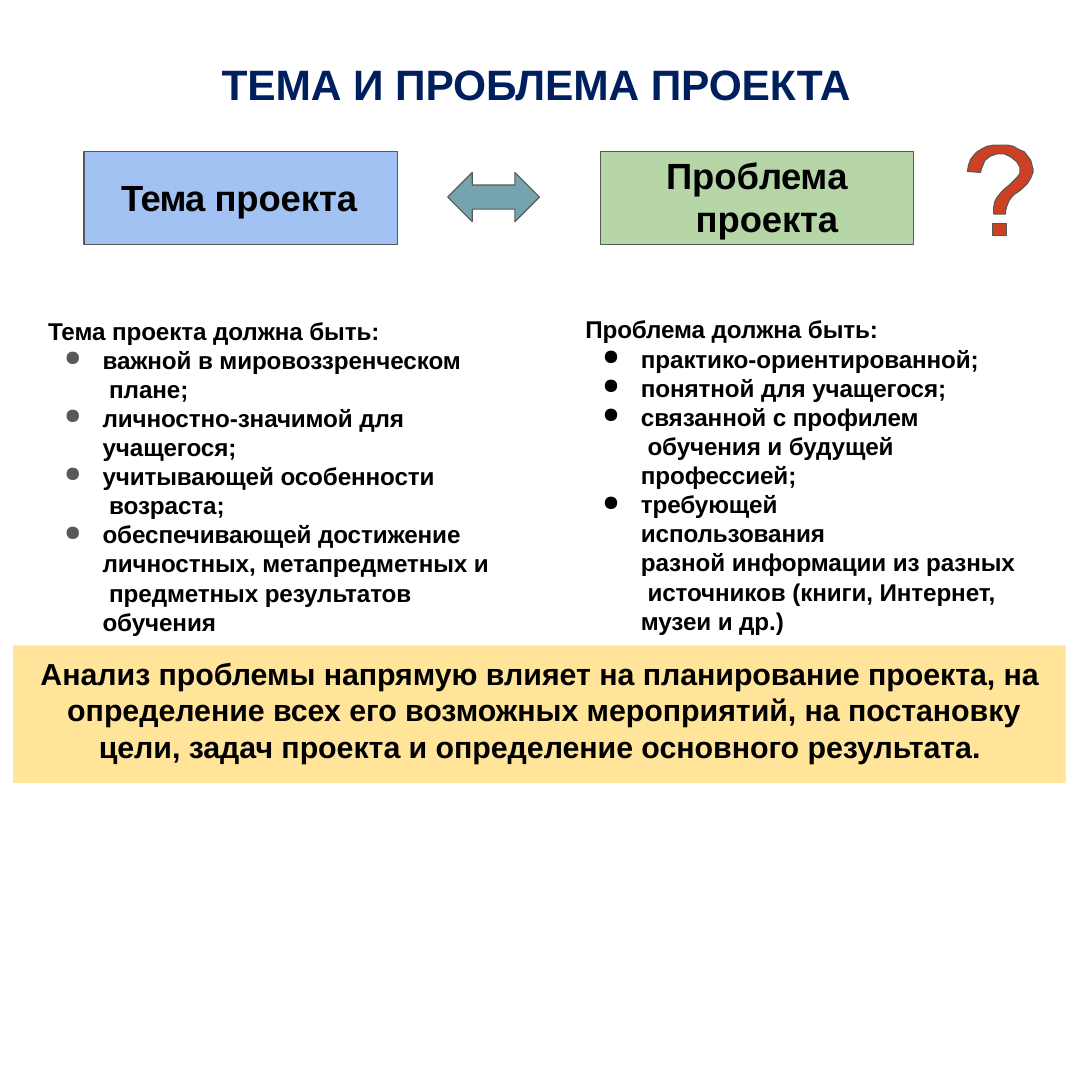
from dataclasses import dataclass

from lxml import etree
from pptx import Presentation
from pptx.dml.color import RGBColor
from pptx.enum.shapes import MSO_SHAPE
from pptx.enum.text import MSO_ANCHOR, PP_ALIGN
from pptx.oxml.ns import qn
from pptx.util import Pt

RECTANGLE = MSO_SHAPE.RECTANGLE
DOUBLE_ARROW = MSO_SHAPE.LEFT_RIGHT_ARROW
TOP = MSO_ANCHOR.TOP
LEFT = PP_ALIGN.LEFT
CENTER = PP_ALIGN.CENTER
PX = 9144


@dataclass(frozen=True)
class Theme:
    font: str = "Arial"
    title: str = "001F5F"
    ink: str = "000000"
    outline: str = "585858"
    topic: str = "A3C2F4"
    problem: str = "B6D6A8"
    arrow: str = "76A4AE"
    question: str = "CC4124"
    banner: str = "FFE499"
    title_size: int = 28
    label_size: int = 24
    banner_size: int = 20
    body_size: int = 16
    outline_width: float = 0.75
    tight: int = -5


THEME = Theme()

TOPIC_DEMANDS = [
    ["важной в мировоззренческом", " плане;"],
    ["личностно-значимой для", "учащегося;"],
    ["учитывающей особенности", " возраста;"],
    ["обеспечивающей достижение", "личностных, метапредметных и",
     " предметных результатов", "обучения"],
]
PROBLEM_DEMANDS = [
    ["практико-ориентированной;"],
    ["понятной для учащегося;"],
    ["связанной с профилем", " обучения и будущей", "профессией;"],
    ["требующей", "использования", "разной информации из разных",
     " источников (книги, Интернет,", "музеи и др.)"],
]
CONCLUSION = [
    ["Анализ проблемы напрямую влияет на планирование проекта, на",
     " определение всех его возможных мероприятий, на постановку"],
    ["цели, задач проекта и определение основного результата."],
]
TOPIC_LABEL = [[("Тема ", -60), ("проекта", -5)]]
PROBLEM_LABEL = [
    [("Про", 0), ("б", -60), ("лем", -40), ("а", 0)],
    [(" проекта", -5)],
]

QUESTION_DOT = [(909, 205), (922, 205), (922, 216), (909, 216)]
QUESTION_HOOK = [
    (916, 133), (923, 133), (928, 134), (933, 137), (938, 139), (941, 143),
    (944, 147), (945, 151), (946, 155), (946, 158), (944, 163), (941, 168),
    (936, 173), (932, 176), (929, 178), (927, 180), (924, 184), (922, 189),
    (921, 193), (921, 196), (910, 196), (910, 193), (910, 190), (911, 185),
    (913, 181), (917, 176), (920, 173), (925, 169), (927, 167), (931, 163),
    (934, 159), (934, 156), (934, 153), (931, 148), (926, 144), (920, 141),
    (916, 141), (913, 141), (907, 143), (902, 147), (899, 154), (898, 158),
    (886, 157), (887, 151), (889, 146), (892, 142), (895, 139), (900, 136),
    (904, 134), (910, 133),
]


def rgb(value):
    return RGBColor.from_string(value)


def emu(*lengths):
    return [length * PX for length in lengths]


def paint(shape, fill, outline=None):
    shape.shadow.inherit = False
    shape.fill.solid()
    shape.fill.fore_color.rgb = rgb(fill)
    if outline:
        shape.line.color.rgb = rgb(outline)
        shape.line.width = Pt(THEME.outline_width)
    else:
        shape.line.fill.background()


def prepare_frame(shape, left=0, top=1, right=0):
    frame = shape.text_frame
    frame.word_wrap = True
    frame.vertical_anchor = TOP
    frame.margin_left, frame.margin_top, frame.margin_right = emu(left, top, right)
    frame.margin_bottom = 0
    return frame


def add_run(paragraph, text, size, color, spacing):
    run = paragraph.add_run()
    run.text = text
    run.font.name = THEME.font
    run.font.size = Pt(size)
    run.font.bold = True
    run.font.color.rgb = rgb(color)
    run.font._element.set("spc", str(spacing))


def write_lines(paragraph, lines, size, color=THEME.ink, align=LEFT):
    paragraph.alignment = align
    for index, runs in enumerate(lines):
        if index:
            paragraph.add_line_break()
        for text, spacing in runs:
            add_run(paragraph, text, size, color, spacing)


def tight_lines(lines):
    return [[(line, THEME.tight)] for line in lines]


def set_indent(paragraph, margin, first=0):
    properties = paragraph._p.get_or_add_pPr()
    properties.set("marL", str(margin * PX))
    properties.set("indent", str(first * PX))
    return properties


def add_bullet(paragraph, color):
    properties = set_indent(paragraph, 36, -35)
    bullet_color = etree.SubElement(properties, qn("a:buClr"))
    etree.SubElement(bullet_color, qn("a:srgbClr"), val=color)
    etree.SubElement(properties, qn("a:buSzPct"), val="88000")
    etree.SubElement(properties, qn("a:buChar"), char="●")


def add_heading(slide, box, text, size, color=THEME.ink):
    heading = slide.shapes.add_textbox(*emu(*box))
    paragraph = prepare_frame(heading).paragraphs[0]
    set_indent(paragraph, 1)
    write_lines(paragraph, tight_lines([text]), size, color)


def add_demands(slide, box, demands, bullet_color):
    frame = prepare_frame(slide.shapes.add_textbox(*emu(*box)))
    for index, lines in enumerate(demands):
        paragraph = frame.add_paragraph() if index else frame.paragraphs[0]
        add_bullet(paragraph, bullet_color)
        write_lines(paragraph, tight_lines(lines), THEME.body_size)


def add_label(slide, left, fill, lines, top_inset, margin, first=0):
    label = slide.shapes.add_shape(RECTANGLE, *emu(left, 139, 287, 85))
    paint(label, fill, THEME.outline)
    paragraph = prepare_frame(label, top=top_inset).paragraphs[0]
    set_indent(paragraph, margin, first)
    write_lines(paragraph, lines, THEME.label_size)


def add_double_arrow(slide):
    arrow = slide.shapes.add_shape(DOUBLE_ARROW, *emu(410, 158, 84, 45))
    arrow.adjustments[0] = 0.49
    arrow.adjustments[1] = 0.5
    paint(arrow, THEME.arrow, THEME.outline)


def add_question_mark(slide):
    builder = slide.shapes.build_freeform(*QUESTION_HOOK[0], scale=PX)
    builder.add_line_segments(QUESTION_HOOK[1:], close=True)
    builder.move_to(*QUESTION_DOT[0])
    builder.add_line_segments(QUESTION_DOT[1:], close=True)
    paint(builder.convert_to_shape(), THEME.question, THEME.outline)


def add_conclusion(slide):
    banner = slide.shapes.add_shape(RECTANGLE, *emu(12, 591, 964, 126))
    paint(banner, THEME.banner)
    frame = prepare_frame(banner, left=20, top=9, right=20)
    for index, lines in enumerate(CONCLUSION):
        paragraph = frame.add_paragraph() if index else frame.paragraphs[0]
        write_lines(paragraph, tight_lines(lines), THEME.banner_size, align=CENTER)


def main():
    presentation = Presentation()
    presentation.slide_width, presentation.slide_height = emu(1000, 1000)
    slide = presentation.slides.add_slide(presentation.slide_layouts[6])
    add_heading(slide, (202, 52, 600, 49), "ТЕМА И ПРОБЛЕМА ПРОЕКТА",
                THEME.title_size, THEME.title)
    add_heading(slide, (43, 289, 311, 29), "Тема проекта должна быть:", THEME.body_size)
    add_demands(slide, (58, 315, 400, 270), TOPIC_DEMANDS, THEME.outline)
    add_heading(slide, (535, 287, 275, 29), "Проблема должна быть:", THEME.body_size)
    add_demands(slide, (551, 314, 390, 270), PROBLEM_DEMANDS, THEME.ink)
    add_label(slide, 77, THEME.topic, TOPIC_LABEL, 21, 34)
    add_label(slide, 550, THEME.problem, PROBLEM_LABEL, 1, 78, -18)
    add_double_arrow(slide)
    add_question_mark(slide)
    add_conclusion(slide)
    presentation.save("out.pptx")


if __name__ == "__main__":
    main()
